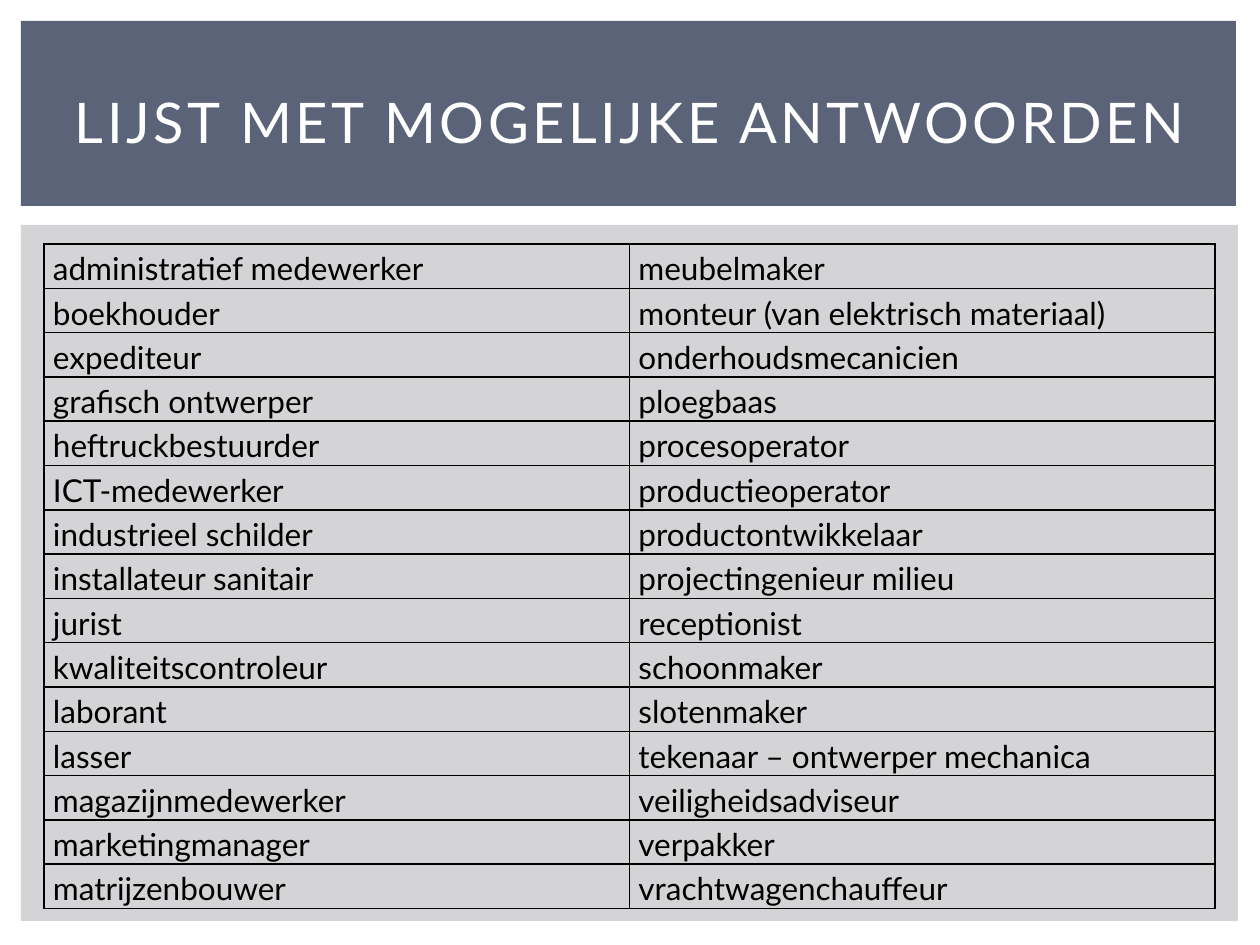
from dataclasses import dataclass

from lxml import etree
from pptx import Presentation
from pptx.dml.color import RGBColor
from pptx.enum.shapes import MSO_SHAPE
from pptx.enum.text import MSO_ANCHOR, PP_ALIGN
from pptx.oxml.ns import qn
from pptx.util import Pt

RECTANGLE = MSO_SHAPE.RECTANGLE
MIDDLE = MSO_ANCHOR.MIDDLE
CENTER = PP_ALIGN.CENTER
BLANK_LAYOUT = 6
EMU_PER_PX = 914400 / 126


@dataclass(frozen=True)
class Theme:
    """Colours, font and type sizes of the slide."""
    font: str = "Lato"
    banner: str = "5A6378"
    panel: str = "D4D4D6"
    title: str = "FFFFFF"
    ink: str = "000000"
    title_size: int = 32
    title_spacing: int = 2
    cell_size: int = 18
    border_width: int = 1


THEME = Theme()
TITLE = "LIJST MET MOGELIJKE ANTWOORDEN"
ANSWER_COLUMNS = [
    ["administratief medewerker", "boekhouder", "expediteur",
     "grafisch ontwerper", "heftruckbestuurder", "ICT-medewerker",
     "industrieel schilder", "installateur sanitair", "jurist",
     "kwaliteitscontroleur", "laborant", "lasser", "magazijnmedewerker",
     "marketingmanager", "matrijzenbouwer"],
    ["meubelmaker", "monteur (van elektrisch materiaal)",
     "onderhoudsmecanicien", "ploegbaas", "procesoperator",
     "productieoperator", "productontwikkelaar", "projectingenieur milieu",
     "receptionist", "schoonmaker", "slotenmaker",
     "tekenaar – ontwerper mechanica", "veiligheidsadviseur", "verpakker",
     "vrachtwagenchauffeur"],
]


def px(length):
    """Turn a length in px into EMU."""
    return round(length * EMU_PER_PX)


def apply_format(target, values):
    """Set each attribute named in a dict of format values."""
    for name, value in values.items():
        setattr(target, name, value)


def write_text(paragraph, text, size, color):
    """Add one run in the theme font and return it."""
    run = paragraph.add_run()
    run.text = text
    apply_format(run.font, {"name": THEME.font, "size": Pt(size), "bold": False})
    run.font.color.rgb = RGBColor.from_string(color)
    return run


def add_panel(slide, box, color):
    """Draw a plain filled rectangle in the box."""
    shape = slide.shapes.add_shape(RECTANGLE, *map(px, box))
    shape.shadow.inherit = False
    shape.fill.solid()
    shape.fill.fore_color.rgb = RGBColor.from_string(color)
    shape.line.fill.background()


def add_banner(slide, box):
    """Draw the title banner with its letterspaced heading."""
    add_panel(slide, box, THEME.banner)
    left, top, width, height = box
    text_box = (left + 32, top + 28, width - 60, height - 40)
    frame = slide.shapes.add_textbox(*map(px, text_box)).text_frame
    apply_format(frame, {"word_wrap": True, "vertical_anchor": MIDDLE})
    paragraph = frame.paragraphs[0]
    paragraph.alignment = CENTER
    run = write_text(paragraph, TITLE, THEME.title_size, THEME.title)
    run.font._element.set("spc", str(THEME.title_spacing * 100))


def add_borders(cell):
    """Give a cell a thin line on all four sides."""
    properties = cell._tc.get_or_add_tcPr()
    for position, side in enumerate(("a:lnL", "a:lnR", "a:lnT", "a:lnB")):
        line = etree.Element(qn(side), w=str(Pt(THEME.border_width)))
        fill = etree.SubElement(line, qn("a:solidFill"))
        etree.SubElement(fill, qn("a:srgbClr"), val=THEME.ink)
        properties.insert(position, line)


def fill_cell(cell, text):
    """Write one answer in a transparent, bordered cell."""
    apply_format(cell, {"margin_left": px(9), "margin_right": px(9),
                        "margin_top": 0, "margin_bottom": 0})
    cell.fill.background()
    add_borders(cell)
    paragraph = cell.text_frame.paragraphs[0]
    paragraph.line_spacing = 1.15
    write_text(paragraph, text, THEME.cell_size, THEME.ink)


def add_answers(slide, box):
    """Draw the panel and the answer table inside it."""
    add_panel(slide, box, THEME.panel)
    left, top, width, height = box
    table_box = (left + 23, top + 19, width - 46, height - 31)
    row_count, column_count = len(ANSWER_COLUMNS[0]), len(ANSWER_COLUMNS)
    table = slide.shapes.add_table(
        row_count, column_count, *map(px, table_box)).table
    apply_format(table, {"first_row": False, "horz_banding": False})
    for column, answers in enumerate(ANSWER_COLUMNS):
        for row, answer in enumerate(answers):
            fill_cell(table.cell(row, column), answer)


def main():
    """Build the slide and save it."""
    presentation = Presentation()
    apply_format(presentation, {"slide_width": px(1260), "slide_height": px(945)})
    slide = presentation.slides.add_slide(presentation.slide_layouts[BLANK_LAYOUT])
    add_banner(slide, (21, 21, 1215, 185))
    add_answers(slide, (21, 225, 1217, 696))
    presentation.save("out.pptx")


if __name__ == "__main__":
    main()
